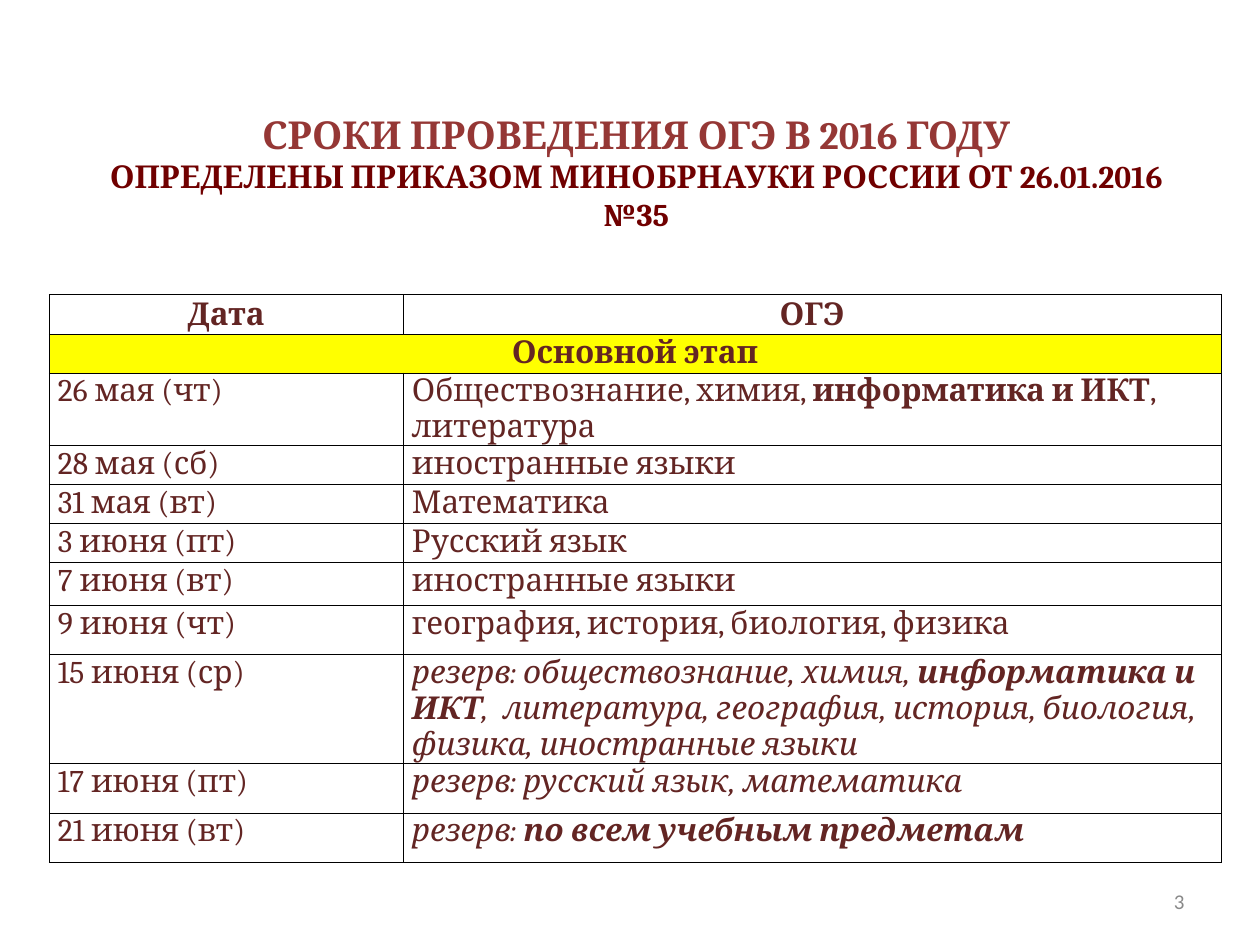
from typing import NamedTuple

from lxml.etree import SubElement
from pptx import Presentation
from pptx.dml.color import RGBColor
from pptx.enum.text import MSO_ANCHOR as Anchor, MSO_AUTO_SIZE as AutoSize, PP_ALIGN as Align
from pptx.oxml.ns import qn
from pptx.util import Inches, Pt

SERIF = "Cambria"
BROWN = "632523"
COLUMN_WIDTHS = (2.81, 6.49)
LINE, TALL, TWO_LINES = 0.31, 0.39, 0.55


class Piece(NamedTuple):
    text: str
    bold: bool = False


class Exam(NamedTuple):
    date: str
    subjects: tuple[Piece, ...]
    height: float = LINE
    reserve: bool = False


EXAMS = (
    Exam("26 мая (чт)", (Piece("Обществознание, химия, "), Piece("информатика и ИКТ", True),
                         Piece(", литература")), TWO_LINES),
    Exam("28 мая (сб)", (Piece("иностранные языки"),)),
    Exam("31 мая (вт)", (Piece("Математика"),)),
    Exam("3 июня (пт)", (Piece("Русский язык"),)),
    Exam("7 июня (вт)", (Piece("иностранные языки"),), 0.34),
    Exam("9 июня (чт)", (Piece("география, история, биология, физика"),), TALL),
    Exam("15 июня (ср)", (Piece("резерв: обществознание, химия, "),
                          Piece("информатика и ИКТ", True),
                          Piece(",  литература, география, история, биология, "
                                "физика, иностранные языки")), TALL, True),
    Exam("17 июня (пт)", (Piece("резерв: русский язык, математика"),), TALL, True),
    Exam("21 июня (вт)", (Piece("резерв: "), Piece("по всем учебным предметам", True)),
         TALL, True),
)


def style(font, size: float, color: str, name: str = SERIF) -> None:
    font.size, font.name = Pt(size), name
    font.color.rgb = RGBColor.from_string(color)


def place(shape, left: float, top: float, width: float, height: float) -> None:
    shape.left, shape.top = Inches(left), Inches(top)
    shape.width, shape.height = Inches(width), Inches(height)


def add_borders(cell) -> None:
    properties = cell._tc.get_or_add_tcPr()
    for index, side in enumerate(("a:lnL", "a:lnR", "a:lnT", "a:lnB")):
        line = properties.makeelement(qn(side), {"w": str(Pt(0.5))})
        SubElement(SubElement(line, qn("a:solidFill")), qn("a:srgbClr"), val="000000")
        properties.insert(index, line)


def fill_cell(cell, pieces: tuple[Piece, ...], heading: bool = False,
              italic: bool = False) -> None:
    cell.margin_left = cell.margin_right = Inches(0.01 if heading else 0.07)
    cell.margin_top = Inches(0.01 if heading else 0)
    cell.margin_bottom = 0
    paragraph = cell.text_frame.paragraphs[0]
    paragraph.alignment = Align.CENTER if heading else Align.LEFT
    for piece in pieces:
        run = paragraph.add_run()
        run.text = piece.text
        style(run.font, 18, BROWN)
        run.font.bold, run.font.italic = piece.bold, italic


def add_title(slide) -> None:
    title = slide.shapes.title
    place(title, 0.55, 0.98, 9, 1.07)
    frame = title.text_frame
    frame.word_wrap, frame.auto_size = True, AutoSize.NONE
    frame.vertical_anchor = Anchor.MIDDLE
    frame.margin_top, frame.margin_bottom = 0, Inches(0.3)
    paragraph = frame.paragraphs[0]
    paragraph.alignment = Align.CENTER
    paragraph.font.bold = True
    heading = paragraph.add_run()
    heading.text = "СРОКИ ПРОВЕДЕНИЯ ОГЭ В 2016 ГОДУ"
    style(heading.font, 22, "953735")
    paragraph.add_line_break()
    order = paragraph.add_run()
    order.text = "ОПРЕДЕЛЕНЫ ПРИКАЗОМ МИНОБРНАУКИ РОССИИ ОТ 26.01.2016 №35"
    style(order.font, 18, "700000")


def add_schedule(slide) -> None:
    heights = [LINE, LINE] + [exam.height for exam in EXAMS]
    schedule = slide.shapes.add_table(
        len(heights), len(COLUMN_WIDTHS), Inches(0.39), Inches(2.34),
        Inches(sum(COLUMN_WIDTHS)), Inches(sum(heights))).table
    schedule.first_row = schedule.horz_banding = False
    for column, width in zip(schedule.columns, COLUMN_WIDTHS):
        column.width = Inches(width)
    for row, height in zip(schedule.rows, heights):
        row.height = Inches(height)
    for cell in schedule.iter_cells():
        cell.fill.background()
        add_borders(cell)

    # Column headings and stage band
    for column, heading in enumerate(("Дата", "ОГЭ")):
        cell = schedule.cell(0, column)
        fill_cell(cell, (Piece(heading, True),), heading=True)
        cell.vertical_anchor = Anchor.MIDDLE
    stage = schedule.cell(1, 0)
    stage.merge(schedule.cell(1, 1))
    stage.fill.solid()
    stage.fill.fore_color.rgb = RGBColor.from_string("FFFF00")
    fill_cell(stage, (Piece("Основной этап", True),), heading=True)

    # Exam days
    for row, exam in enumerate(EXAMS, start=2):
        fill_cell(schedule.cell(row, 0), (Piece(exam.date),))
        fill_cell(schedule.cell(row, 1), exam.subjects, italic=exam.reserve)


def add_page_number(slide) -> None:
    page = slide.shapes.add_textbox(Inches(7.17), Inches(6.95), Inches(2.33), Inches(0.4))
    frame = page.text_frame
    frame.word_wrap = True
    frame.vertical_anchor = Anchor.MIDDLE
    paragraph = frame.paragraphs[0]
    paragraph.text = "3"
    paragraph.alignment = Align.RIGHT
    style(paragraph.font, 12, "898989", "Calibri")


def main() -> None:
    deck = Presentation()
    deck.slide_width, deck.slide_height = Inches(10), Inches(7.5)
    slide = deck.slides.add_slide(deck.slide_layouts[5])
    add_title(slide)
    add_schedule(slide)
    add_page_number(slide)
    deck.save("out.pptx")


if __name__ == "__main__":
    main()
